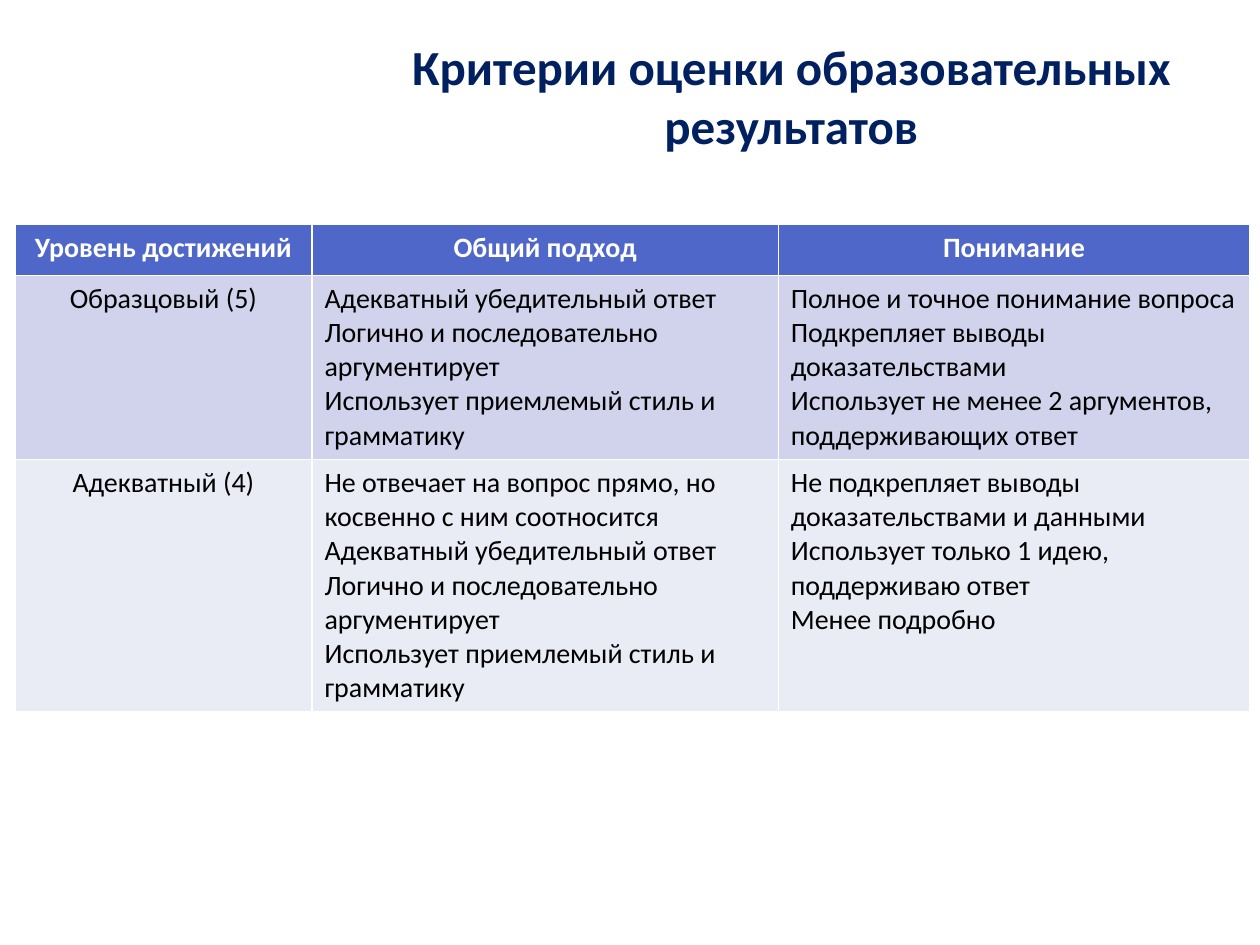
from pptx import Presentation
from pptx.dml.color import RGBColor
from pptx.enum.text import MSO_ANCHOR, PP_ALIGN
from pptx.util import Cm, Pt


def color(value):
    return RGBColor.from_string(value)


def format_paragraph(paragraph, size, text_color, bold, alignment):
    paragraph.alignment = alignment
    paragraph.font.name = "Calibri"
    paragraph.font.size = Pt(size)
    paragraph.font.bold = bold
    paragraph.font.color.rgb = color(text_color)


presentation = Presentation()
presentation.slide_width = Cm(25.4)
presentation.slide_height = Cm(19.05)
slide = presentation.slides.add_slide(presentation.slide_layouts[5])

# Title
title = slide.shapes.title
title.left, title.top, title.width, title.height = Cm(6.5), Cm(0.33), Cm(18.9), Cm(3.2)
title.text_frame.text = "Критерии оценки образовательных результатов"
title.text_frame.vertical_anchor = MSO_ANCHOR.MIDDLE
format_paragraph(title.text_frame.paragraphs[0], 28, "002060", True, PP_ALIGN.CENTER)

# Table content: each line of a cell is a paragraph
rows = [
    ["Уровень достижений", "Общий подход", "Понимание"],
    [
        "Образцовый (5)",
        "Адекватный убедительный ответ\n"
        "Логично и последовательно аргументирует\n"
        "Использует приемлемый стиль и грамматику",
        "Полное и точное понимание вопроса\n"
        "Подкрепляет выводы доказательствами\n"
        "Использует не менее 2 аргументов, поддерживающих ответ",
    ],
    [
        "Адекватный (4)",
        "Не отвечает на вопрос прямо, но косвенно с ним соотносится\n"
        "Адекватный убедительный ответ\n"
        "Логично и последовательно аргументирует\n"
        "Использует приемлемый стиль и грамматику",
        "Не подкрепляет выводы доказательствами и данными\n"
        "Использует только 1 идею, поддерживаю ответ\n"
        "Менее подробно",
    ],
]
column_widths = [5.99, 9.4, 9.5]
row_heights = [1.03, 3.71, 5.08]
row_fills = ["4E67C8", "D0D3EB", "E9EBF5"]

# Criteria table; the default table style supplies the white borders
table = slide.shapes.add_table(
    len(rows), len(column_widths), Cm(0.3), Cm(4.52),
    Cm(sum(column_widths)), Cm(sum(row_heights)),
).table
for column, width in zip(table.columns, column_widths):
    column.width = Cm(width)

for row_index, texts in enumerate(rows):
    table.rows[row_index].height = Cm(row_heights[row_index])
    is_header = row_index == 0
    for column_index, text in enumerate(texts):
        cell = table.cell(row_index, column_index)
        cell.text = text
        cell.fill.solid()
        cell.fill.fore_color.rgb = color(row_fills[row_index])
        centered = is_header or column_index == 0
        for paragraph in cell.text_frame.paragraphs:
            format_paragraph(
                paragraph, 16, "FFFFFF" if is_header else "000000", is_header,
                PP_ALIGN.CENTER if centered else PP_ALIGN.LEFT,
            )

presentation.save("out.pptx")
